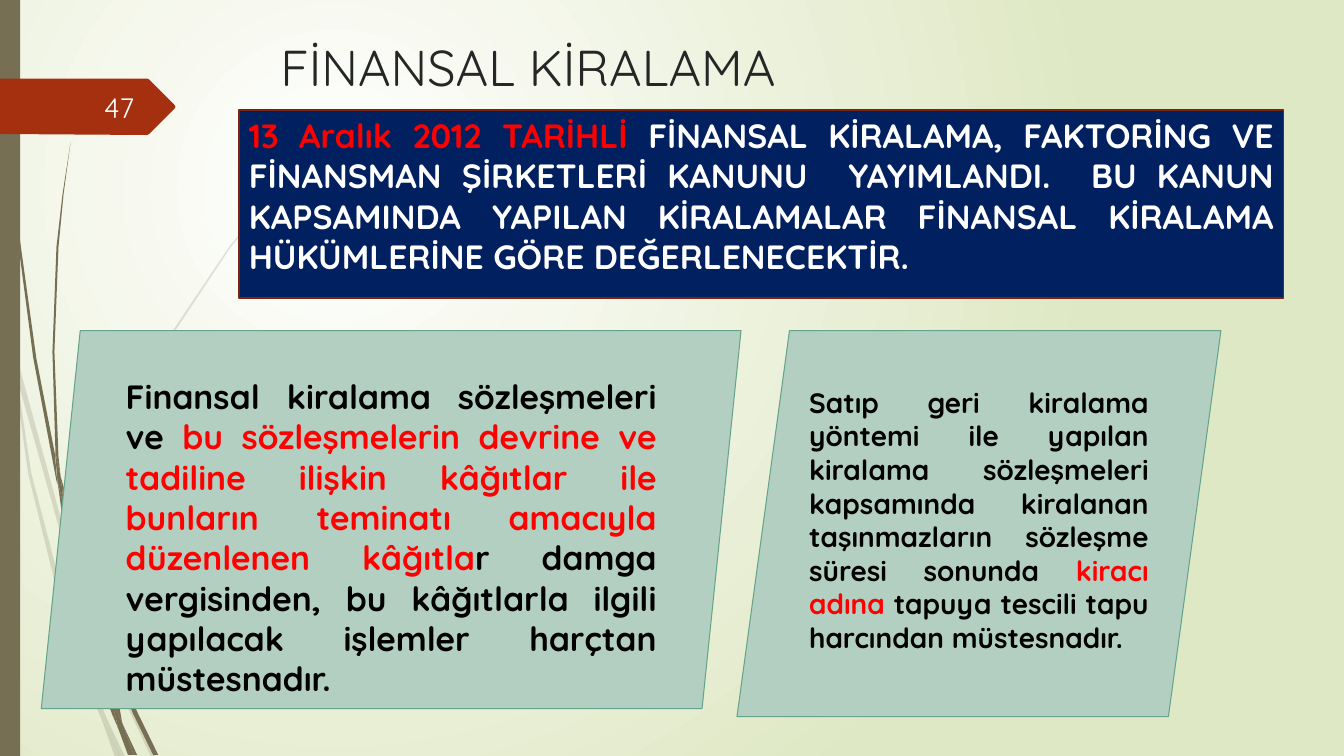
from lxml import etree
from pptx import Presentation
from pptx.dml.color import RGBColor
from pptx.enum.shapes import MSO_SHAPE
from pptx.enum.text import MSO_ANCHOR, MSO_AUTO_SIZE, PP_ALIGN
from pptx.oxml.ns import qn
from pptx.util import Inches, Pt

FONT = "Quicksand"
WHITE = RGBColor(0xFF, 0xFF, 0xFF)
OFF_WHITE = RGBColor(0xFE, 0xFF, 0xFF)
BLACK = RGBColor(0x00, 0x00, 0x00)
CHARCOAL = RGBColor(0x26, 0x26, 0x26)
RED = RGBColor(0xFF, 0x00, 0x00)
RUST = RGBColor(0xA5, 0x30, 0x10)
DARK_RUST = RGBColor(0x7A, 0x24, 0x0C)
NAVY = RGBColor(0x00, 0x20, 0x60)
SAGE = RGBColor(0xB3, 0xCF, 0xC2)
GREEN = RGBColor(0x65, 0xA4, 0x8B)
OLIVE = RGBColor(0x76, 0x6F, 0x54)
PALE_LIME = RGBColor(0xDF, 0xE8, 0xC4)

PALE_BLADES = [
    [(0.11, 3.5), (0.09, 3.22), (0, 2.82), (0, 2.99), (0.1, 3.44)],
    [(0.58, 5.22), (0.84, 5.99), (0.85, 5.86), (0.62, 5.2), (0.14, 3.45), (0.17, 3.76)],
    [(0.92, 6.07), (0.88, 5.96), (0.88, 6.1), (1.23, 6.94), (1.5, 7.51), (1.55, 7.51),
     (1.27, 6.92)],
    [(1.19, 7.51), (1.24, 7.51), (1.05, 7.11)],
    [(0.93, 6.83), (0.7, 6.19), (0.31, 4.69), (0.17, 3.76), (0.11, 3.5), (0.28, 4.7),
     (0.65, 6.21), (0.92, 6.93), (1.01, 7.14), (0.99, 7.07)],
    [(0.84, 5.99), (0.87, 6.46), (0.93, 6.83), (0.96, 6.92), (1.05, 7.11), (1.03, 7.06),
     (0.91, 6.46), (0.88, 6.1), (0.88, 6.08)],
    [(0.88, 5.84), (1.1, 4.62), (1.6, 3.49), (2.29, 2.45), (2.68, 1.98), (2.9, 1.75),
     (3.12, 1.54), (3.12, 1.53), (2.89, 1.75), (2.68, 1.97), (2.28, 2.44), (1.58, 3.48),
     (1.07, 4.61), (0.85, 5.84), (0.85, 5.86), (0.88, 5.96)],
    [(1.01, 7.14), (1.14, 7.51), (1.19, 7.51)],
    [(0.88, 6.08), (0.88, 6.1), (0.88, 5.96), (0.85, 5.86), (0.84, 5.99)],
    [(0.96, 6.92), (0.93, 6.83), (0.99, 7.07), (1.01, 7.14), (1.19, 7.51), (1.05, 7.11)],
]
DARK_BLADES = [
    [(0.07, 1.1), (0.17, 2.33), (0.33, 3.55), (0.56, 4.77), (0.57, 4.81), (0.55, 4.57),
     (0.55, 4.53), (0.36, 3.55), (0.19, 2.32), (0.08, 1.09), (0.05, 0.48), (0.04, 0),
     (0.03, 0), (0.04, 0.48)],
    [(0.88, 5.92), (1.06, 6.45), (1.06, 6.31), (0.93, 5.9), (0.6, 4.72), (0.64, 5.05)],
    [(1.13, 6.49), (1.1, 6.41), (1.11, 6.56), (1.32, 7.08), (1.52, 7.49), (1.57, 7.49),
     (1.36, 7.06)],
    [(1.1, 6.91), (0.98, 6.57), (0.72, 5.56), (0.64, 5.05), (0.57, 4.77), (0.68, 5.57),
     (0.93, 6.59), (1.11, 7.08), (1.17, 7.22), (1.16, 7.17)],
    [(0.6, 4.72), (0.58, 4.53), (0.54, 3.49), (0.58, 2.45), (0.63, 1.93), (0.7, 1.41),
     (0.62, 1.93), (0.56, 2.45), (0.52, 3.49), (0.55, 4.49)],
    [(1.33, 7.49), (1.36, 7.49), (1.22, 7.19)],
    [(0.57, 4.77), (0.64, 5.05), (0.6, 4.72), (0.55, 4.49), (0.55, 4.53)],
    [(1.11, 6.33), (1.25, 5.52), (1.58, 4.76), (2.05, 4.06), (2.31, 3.74), (2.45, 3.59),
     (2.61, 3.44), (2.6, 3.44), (2.45, 3.58), (2.31, 3.73), (2.04, 4.05), (1.56, 4.74),
     (1.22, 5.51), (1.06, 6.31), (1.1, 6.41)],
    [(1.17, 7.22), (1.27, 7.49), (1.31, 7.49)],
    [(1.06, 6.45), (1.1, 6.91), (1.16, 7.06), (1.22, 7.19), (1.21, 7.16), (1.11, 6.56),
     (1.09, 6.51)],
    [(1.06, 6.45), (1.09, 6.51), (1.11, 6.56), (1.1, 6.41), (1.06, 6.31)],
    [(1.16, 7.06), (1.1, 6.91), (1.16, 7.17), (1.17, 7.22), (1.3, 7.49), (1.33, 7.49),
     (1.22, 7.19)],
]
TAG_OUTLINE = [(1.73, 1.08), (1.48, 1.33), (1.46, 1.34), (0, 1.33), (0, 0.78),
               (1.46, 0.78), (1.48, 0.79), (1.73, 1.04), (1.74, 1.06)]


def paint(shape, fill, line=None, width=0):
    shape.shadow.inherit = False
    shape.fill.solid()
    shape.fill.fore_color.rgb = fill
    if line is None:
        shape.line.fill.background()
    else:
        shape.line.color.rgb = line
        shape.line.width = Pt(width)


def write(shape, spans, size, align, bold=False, anchor=MSO_ANCHOR.TOP):
    """Fill the shape with one paragraph of (text, colour) spans."""
    frame = shape.text_frame
    settings = {"word_wrap": True, "auto_size": MSO_AUTO_SIZE.NONE, "vertical_anchor": anchor}
    for name, value in settings.items():
        setattr(frame, name, value)
    para = frame.paragraphs[0]
    para.alignment = align
    for text, color in spans:
        span = para.add_run()
        span.text = text
        for name, value in {"name": FONT, "size": Pt(size), "bold": bold}.items():
            setattr(span.font, name, value)
        span.font.color.rgb = color


def add_outline(page, points, color, opacity=100):
    corners = [(Inches(x), Inches(y)) for x, y in points]
    builder = page.shapes.build_freeform(*corners[0])
    builder.add_line_segments(corners[1:], close=True)
    shape = builder.convert_to_shape()
    paint(shape, color)
    if opacity < 100:
        tint = shape.fill._xPr.find(qn("a:solidFill"))[0]
        etree.SubElement(tint, qn("a:alpha"), val=str(opacity * 1000))


def add_background(page):
    """Radial gradient centred in the upper left quarter."""
    fill = page.background.fill
    fill.gradient()
    for stop, color, position in zip(fill.gradient_stops, (WHITE, PALE_LIME), (0, 1)):
        stop.color.rgb = color
        stop.position = position
    linear = next(page.element.iter(qn("a:lin")))
    radial = etree.Element(qn("a:path"), {"path": "circle"})
    etree.SubElement(radial, qn("a:fillToRect"), l="50000", t="50000", r="100000", b="100000")
    linear.getparent().replace(linear, radial)


def add_side_decoration(page, height):
    for blades, opacity in ((PALE_BLADES, 20), (DARK_BLADES, 100)):
        for blade in blades:
            add_outline(page, blade, OLIVE, opacity)
    strip = page.shapes.add_shape(MSO_SHAPE.RECTANGLE, 0, 0, Inches(0.2), height)
    paint(strip, OLIVE)


def add_page_tag(page, number, box):
    add_outline(page, TAG_OUTLINE, RUST)
    label = page.shapes.add_textbox(*map(Inches, box))
    write(label, [(number, OFF_WHITE)], 20, PP_ALIGN.RIGHT, anchor=MSO_ANCHOR.MIDDLE)


def add_title(page, text, box):
    title = page.shapes.title
    for name, value in zip(("left", "top", "width", "height"), box):
        setattr(title, name, Inches(value))
    write(title, [(text, CHARCOAL)], 36, PP_ALIGN.LEFT)


def add_law_banner(page, spans, box):
    banner = page.shapes.add_shape(MSO_SHAPE.RECTANGLE, *map(Inches, box))
    paint(banner, NAVY, DARK_RUST, 1.25)
    write(banner, spans, 24, PP_ALIGN.JUSTIFY, bold=True)


def add_exemption(page, spans, size, slant, box):
    panel = page.shapes.add_shape(MSO_SHAPE.PARALLELOGRAM, *map(Inches, box))
    panel.adjustments[0] = slant
    paint(panel, SAGE, GREEN, 0.75)
    write(panel, spans, size, PP_ALIGN.JUSTIFY, bold=True)


def main():
    deck = Presentation()
    deck.slide_width, deck.slide_height = Inches(13.33), Inches(7.5)
    page = deck.slides.add_slide(deck.slide_layouts[5])
    add_background(page)
    add_side_decoration(page, deck.slide_height)
    add_title(page, "FİNANSAL KİRALAMA", (2.68, 0.31, 8.5, 1))
    add_page_tag(page, "47", (0.58, 0.86, 0.85, 0.4))
    add_law_banner(page, [
        ("13 Aralık 2012 TARİHLİ ", RED),
        ("FİNANSAL KİRALAMA, FAKTORİNG VE FİNANSMAN ŞİRKETLERİ KANUNU  YAYIMLANDI.  "
         "BU KANUN KAPSAMINDA YAPILAN KİRALAMALAR FİNANSAL KİRALAMA HÜKÜMLERİNE GÖRE "
         "DEĞERLENECEKTİR.", WHITE),
    ], (2.37, 1.09, 10.36, 1.87))
    add_exemption(page, [
        ("Finansal kiralama sözleşmeleri ve ", BLACK),
        ("bu sözleşmelerin devrine ve tadiline ilişkin kâğıtlar ile bunların teminatı "
         "amacıyla düzenlenen kâğıtla", RED),
        ("r damga vergisinden, bu kâğıtlarla ilgili yapılacak işlemler harçtan "
         "müstesnadır.", BLACK),
    ], 24, 0.103, (0.41, 3.28, 6.94, 3.75))
    add_exemption(page, [
        ("Satıp geri kiralama yöntemi ile yapılan kiralama sözleşmeleri kapsamında "
         "kiralanan taşınmazların sözleşme süresi sonunda ", BLACK),
        ("kiracı adına ", RED),
        ("tapuya tescili tapu harcından müstesnadır.", BLACK),
    ], 20, 0.136, (7.31, 3.28, 4.8, 3.83))
    deck.save("out.pptx")


if __name__ == "__main__":
    main()
